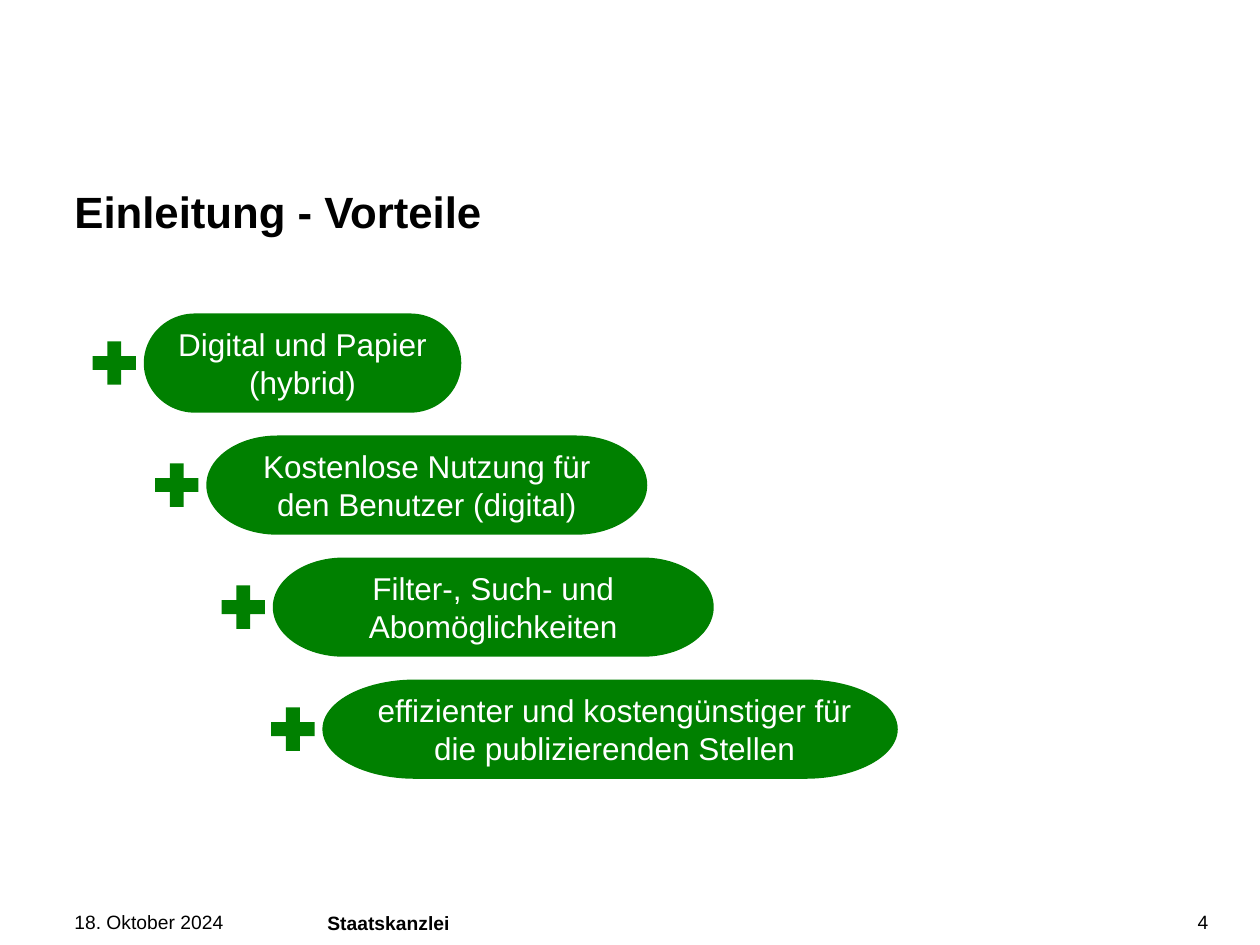
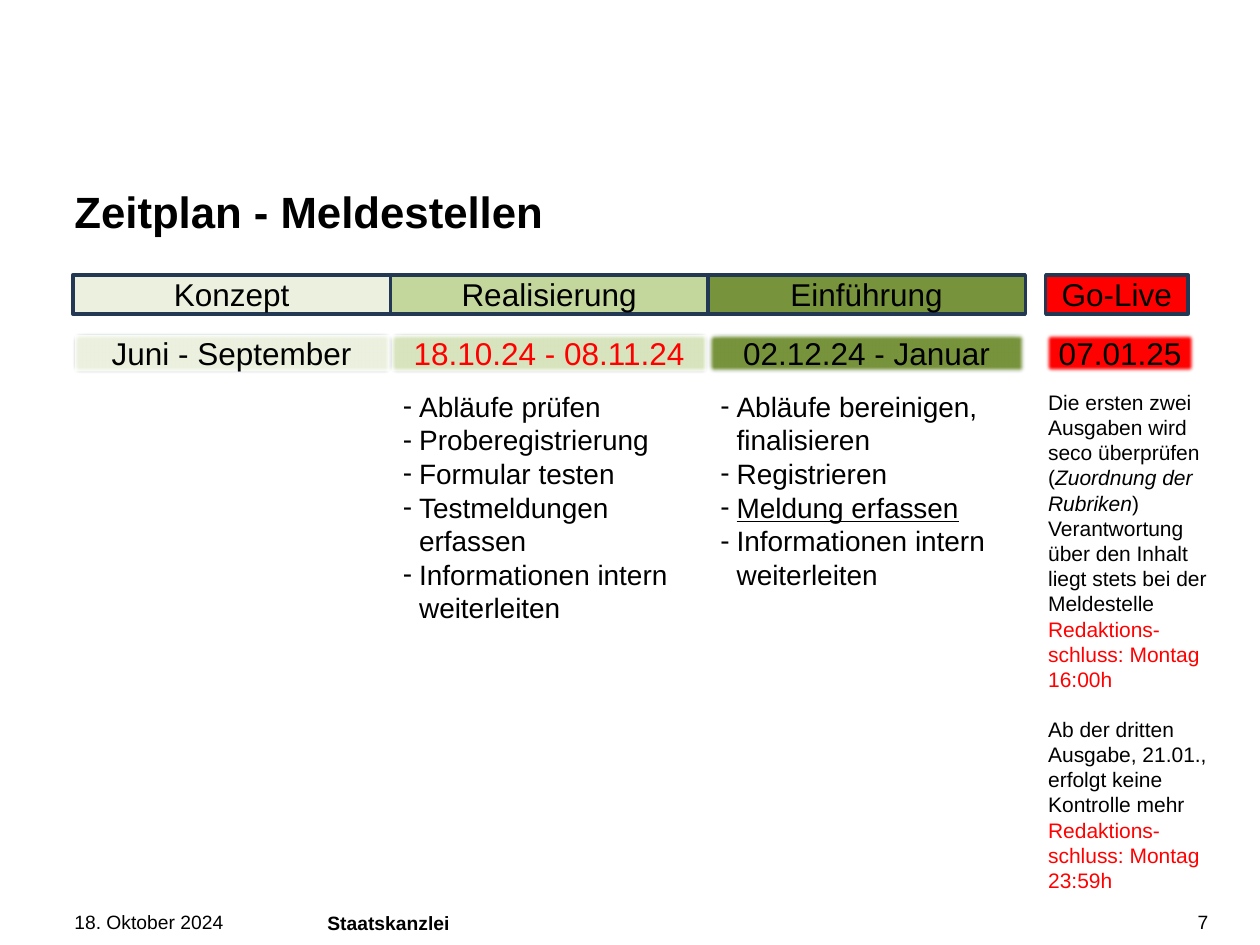
from dataclasses import dataclass

from lxml import etree
from pptx import Presentation
from pptx.dml.color import RGBColor
from pptx.enum.shapes import MSO_SHAPE
from pptx.enum.text import MSO_ANCHOR, MSO_AUTO_SIZE, PP_ALIGN
from pptx.oxml.ns import qn
from pptx.util import Cm, Pt

PILL, PLUS, BAR = MSO_SHAPE.FLOWCHART_TERMINATOR, MSO_SHAPE.MATH_PLUS, MSO_SHAPE.RECTANGLE
TOP, MIDDLE = MSO_ANCHOR.TOP, MSO_ANCHOR.MIDDLE
LEFT, CENTER, RIGHT = PP_ALIGN.LEFT, PP_ALIGN.CENTER, PP_ALIGN.RIGHT
NO_FIT = MSO_AUTO_SIZE.NONE
TITLE_ONLY, TWO_CONTENT = 5, 3


@dataclass(frozen=True)
class Theme:
    font: str = "Arial"
    text: str = "000000"
    inverse: str = "FFFFFF"
    advantage: str = "008000"
    alert: str = "FF0000"
    outline: str = "233953"
    concept: str = "EBF1DE"
    realisation: str = "C3D69B"
    realisation_date: str = "D7E4BD"
    launch: str = "77933C"
    title_size: int = 25
    label_size: int = 18
    list_size: int = 16
    note_size: int = 12
    footer_size: int = 11


THEME = Theme()


# Text and shape helpers
def write_text(frame, paragraphs, size, color=THEME.text, bold=False, align=LEFT,
               anchor=TOP, insets=(0.25, 0.13), line_spacing=None, gap=0):
    """Each paragraph is a string or a list of strings and (string, format) pairs."""
    frame.word_wrap = True
    frame.auto_size = NO_FIT
    frame.vertical_anchor = anchor
    frame.margin_left = frame.margin_right = Cm(insets[0])
    frame.margin_top = frame.margin_bottom = Cm(insets[1])
    for index, content in enumerate(paragraphs):
        paragraph = frame.paragraphs[0] if index == 0 else frame.add_paragraph()
        paragraph.alignment = align
        paragraph.space_before = Pt(gap if index else 0)
        paragraph.space_after = Pt(0)
        paragraph.line_spacing = Pt(line_spacing) if line_spacing else 1.0
        for part in [content] if isinstance(content, str) else content:
            words, extra = (part, {}) if isinstance(part, str) else part
            for number, line in enumerate(words.split("\n")):
                if number:
                    paragraph.add_line_break()
                run = paragraph.add_run()
                run.text = line
                font = run.font
                font.name, font.size, font.bold = THEME.font, Pt(size), bold
                font.italic = extra.get("italic", False)
                font.underline = extra.get("underline", False)
                font.color.rgb = RGBColor.from_string(extra.get("color", color))


def add_text_box(slide, box, paragraphs, **text_format):
    text_box = slide.shapes.add_textbox(*map(Cm, box))
    write_text(text_box.text_frame, paragraphs, **text_format)


def fill_placeholder(placeholder, box, paragraphs, **text_format):
    placeholder.left, placeholder.top, placeholder.width, placeholder.height = map(Cm, box)
    write_text(placeholder.text_frame, paragraphs, **text_format)


def add_filled(shapes, kind, box, fill):
    shape = shapes.add_shape(kind, *map(Cm, box))
    shape.shadow.inherit = False
    shape.fill.solid()
    shape.fill.fore_color.rgb = RGBColor.from_string(fill)
    shape.line.fill.background()
    return shape


def indent(paragraph, left, first=0.0, bullet=None):
    properties = paragraph._p.get_or_add_pPr()
    properties.set("marL", str(Cm(left)))
    properties.set("indent", str(Cm(first)))
    if bullet:
        etree.SubElement(properties, qn("a:buChar")).set("char", bullet)


# Frame shared by both slides
def add_page(deck, layout, title, number):
    slide = deck.slides.add_slide(deck.slide_layouts[layout])
    fill_placeholder(slide.shapes.title, (1.5, 3.99, 22.86, 0.79), [title],
                     size=THEME.title_size, bold=True, anchor=MIDDLE,
                     insets=(0, 0), line_spacing=22)
    footer = dict(size=THEME.footer_size, insets=(0, 0))
    add_text_box(slide, (6.6, 18.42, 15.5, 0.43), ["Staatskanzlei"],
                 bold=True, line_spacing=12, **footer)
    add_text_box(slide, (1.5, 18.39, 4, 0.46), ["18. Oktober 2024"],
                 line_spacing=12, **footer)
    add_text_box(slide, (23.57, 18.36, 0.79, 0.48), [number], align=RIGHT, **footer)
    return slide


# Slide: advantages
def add_advantage(slide, box, paragraphs, shift):
    left, top, width, height = box
    plus_size = 1.19
    group = slide.shapes.add_group_shape()
    pill = add_filled(group.shapes, PILL, box, THEME.advantage)
    write_text(pill.text_frame, paragraphs, size=THEME.label_size,
               color=THEME.inverse, align=CENTER, anchor=MIDDLE)
    if shift:
        indent(pill.text_frame.paragraphs[0], shift)
    plus_top = top + (height - plus_size) / 2
    add_filled(group.shapes, PLUS, (left - plus_size, plus_top, plus_size, plus_size),
               THEME.advantage)


def build_advantages(deck):
    slide = add_page(deck, TITLE_ONLY, "Einleitung - Vorteile", "4")
    first_top, pitch, height = 6.32, 2.46, 2.0
    advantages = [
        (2.9, 6.4, ["Digital und Papier", "(hybrid)"], 0),
        (4.16, 8.89, ["Kostenlose Nutzung für den Benutzer (digital)"], 0),
        (5.5, 8.89, ["Filter-, Such- und Abomöglichkeiten"], 0),
        (6.5, 11.6, ["effizienter und kostengünstiger für die publizierenden Stellen"], 0.18),
    ]
    for row, (left, width, paragraphs, shift) in enumerate(advantages):
        add_advantage(slide, (left, first_top + row * pitch, width, height),
                      paragraphs, shift)


# Slide: schedule
def add_bar(slide, box, label, fill, color=THEME.text, soft=False):
    bar = add_filled(slide.shapes, BAR, box, fill)
    bar.line.color.rgb = RGBColor.from_string(THEME.outline)
    bar.line.width = Pt(2)
    if soft:
        effects = bar._element.spPr.find(qn("a:effectLst"))
        etree.SubElement(effects, qn("a:softEdge")).set("rad", str(Pt(2.5)))
    write_text(bar.text_frame, [label], size=THEME.label_size, color=color,
               align=CENTER, anchor=MIDDLE, insets=(0, 0.13))


def add_task_list(placeholder, box, tasks):
    fill_placeholder(placeholder, box, tasks, size=THEME.list_size)
    for paragraph in placeholder.text_frame.paragraphs:
        indent(paragraph, 0.33, -0.33, bullet="-")


def build_schedule(deck):
    slide = add_page(deck, TWO_CONTENT, "Zeitplan - Meldestellen", "7")
    left, phase_width, bar_height = 1.47, 6.4, 0.79
    phase_top, date_top, detail_top = 5.54, 6.73, 7.72
    starts = [left + column * phase_width for column in range(3)] + [21.08]

    # Phases and their dates
    phases = [
        ("Konzept", THEME.concept, phase_width),
        ("Realisierung", THEME.realisation, phase_width),
        ("Einführung", THEME.launch, phase_width),
        ("Go-Live", THEME.alert, 2.87),
    ]
    dates = [
        ("Juni - September", THEME.concept, phase_width, THEME.text),
        ("18.10.24 - 08.11.24", THEME.realisation_date, phase_width, THEME.alert),
        ("02.12.24 - Januar", THEME.launch, phase_width, THEME.text),
        ("07.01.25", THEME.alert, 3.0, THEME.text),
    ]
    for start, (label, fill, width) in zip(starts, phases):
        add_bar(slide, (start, phase_top, width, bar_height), label, fill)
    for start, (label, fill, width, color) in zip(starts, dates):
        add_bar(slide, (start, date_top, width, bar_height), label, fill, color, soft=True)

    # Tasks of each phase
    forward = "Informationen intern\nweiterleiten"
    add_task_list(slide.placeholders[1], (starts[1], detail_top, 6.6, 5.74), [
        "Abläufe prüfen", "Proberegistrierung", "Formular testen",
        "Testmeldungen\nerfassen", forward])
    add_task_list(slide.placeholders[2], (starts[2], detail_top, 7.39, 5.05), [
        "Abläufe bereinigen,\nfinalisieren", "Registrieren",
        [("Meldung erfassen", {"underline": True})], forward])

    # Notes on the go-live
    alert = {"color": THEME.alert}
    first_issues = [
        "Die ersten zwei Ausgaben wird seco überprüfen (",
        ("Zuordnung der Rubriken", {"italic": True}),
        ")\nVerantwortung über den Inhalt liegt stets bei der Meldestelle",
    ]
    first_deadline = [("Redaktions-schluss: Montag 16:00h", alert)]
    later_issues = [
        "Ab der dritten Ausgabe, 21.01., erfolgt keine Kontrolle mehr ",
        ("Redaktions-schluss: Montag 23:59h", alert),
    ]
    add_text_box(slide, (20.88, detail_top, 4.04, 10.52),
                 [first_issues, first_deadline, later_issues], size=THEME.note_size)
    notes = slide.shapes[-1].text_frame
    notes.paragraphs[-1].space_before = Pt(14)


def main():
    deck = Presentation()
    deck.slide_width, deck.slide_height = Cm(25.4), Cm(19.05)
    build_advantages(deck)
    build_schedule(deck)
    deck.save("out.pptx")


if __name__ == "__main__":
    main()
